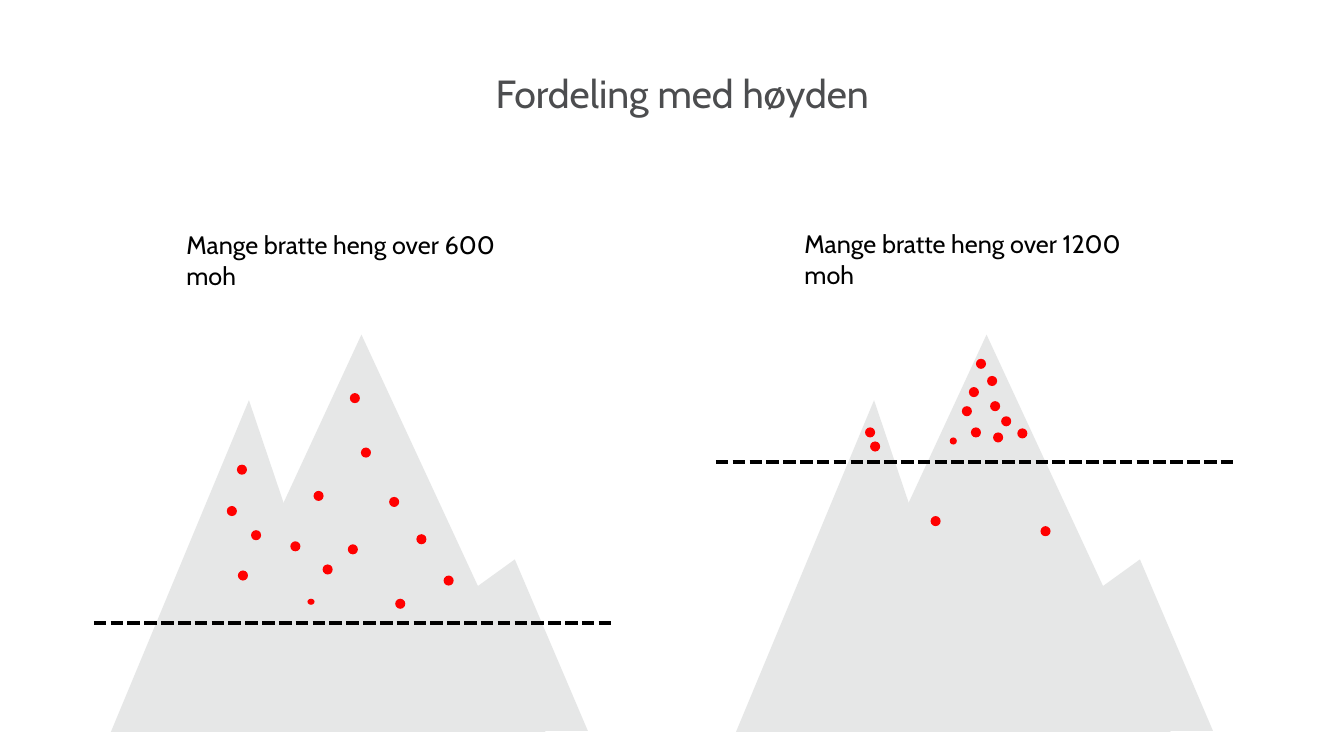
from pptx import Presentation
from pptx.dml.color import RGBColor
from pptx.enum import dml, shapes, text
from pptx.oxml import ns
from pptx.util import Pt
from lxml import etree

EMU_PER_PX = 9144
FONT = "Cabin"
TITLE_GREY = RGBColor(0x4C, 0x4D, 0x4F)
MOUNTAIN_GREY = RGBColor(0xE6, 0xE7, 0xE7)
RED = RGBColor(0xFF, 0x00, 0x00)
BLACK = RGBColor(0x00, 0x00, 0x00)

DOT_SIZE = 10
LINE_LENGTH = 516
PEAKS = [
    (0, 65, 248, 329, 0.552),
    (66, 0, 365, 394, 0.5),
    (165, 223, 308, 170, 0.765),
]
LOW_DOTS = [
    (225, 502), (311, 487), (320, 560), (440, 571), (249, 526),
    (236, 566), (235, 461), (288, 537), (345, 540), (392, 594),
    (358, 444), (347, 390), (413, 530), (386, 493),
]
HIGH_DOTS = [
    (863, 438), (979, 373), (982, 398), (963, 424), (985, 429),
    (961, 384), (1009, 425), (954, 403), (858, 424), (993, 413),
    (968, 356), (1032, 522), (923, 512),
]


def px(length):
    return length * EMU_PER_PX


def add_filled(container, kind, left, top, width, height, color):
    shape = container.add_shape(kind, px(left), px(top), px(width), px(height))
    shape.shadow.inherit = False
    shape.fill.solid()
    shape.fill.fore_color.rgb = color
    shape.line.fill.background()
    return shape


def add_dot(container, left, top, width=DOT_SIZE, height=DOT_SIZE):
    add_filled(container, shapes.MSO_SHAPE.OVAL, left, top, width, height, RED)


def add_mountain(slide, left, top, dots, small_dot):
    group = slide.shapes.add_group_shape()
    for x, y, width, height, apex in PEAKS:
        peak = add_filled(group.shapes, shapes.MSO_SHAPE.ISOSCELES_TRIANGLE,
                          left + x, top + y, width, height, MOUNTAIN_GREY)
        peak.adjustments[0] = apex
    for x, y in dots:
        add_dot(group.shapes, x, y)
    add_dot(group.shapes, *small_dot)


def add_height_line(slide, left, top):
    connector = slide.shapes.add_connector(
        shapes.MSO_CONNECTOR.STRAIGHT,
        px(left), px(top), px(left + LINE_LENGTH), px(top))
    connector.line.color.rgb = BLACK
    connector.line.width = Pt(3)
    connector.line.dash_style = dml.MSO_LINE.SQUARE_DOT
    properties = connector._element.spPr
    etree.SubElement(properties, ns.qn("a:effectLst"))


def format_text(frame, wording, size, color, alignment):
    frame.text = wording
    frame.word_wrap = True
    frame.vertical_anchor = text.MSO_ANCHOR.TOP
    paragraph = frame.paragraphs[0]
    paragraph.alignment = alignment
    paragraph.font.name = FONT
    paragraph.font.size = Pt(size)
    paragraph.font.color.rgb = color


def set_title(slide, wording, left, top, width, height):
    title = slide.shapes.title
    title.left, title.top = px(left), px(top)
    title.width, title.height = px(width), px(height)
    format_text(title.text_frame, wording, 28, TITLE_GREY, text.PP_ALIGN.CENTER)


def add_caption(slide, wording, left, top, width, height):
    box = slide.shapes.add_textbox(px(left), px(top), px(width), px(height))
    format_text(box.text_frame, wording, 18, BLACK, text.PP_ALIGN.LEFT)


def main():
    presentation = Presentation()
    presentation.slide_width = px(1333)
    presentation.slide_height = px(750)
    slide = presentation.slides.add_slide(presentation.slide_layouts[5])

    set_title(slide, "Fordeling med høyden", 113, 64, 1127, 90)
    add_mountain(slide, 110, 332, LOW_DOTS, (305, 594, 7, 6))
    add_mountain(slide, 730, 332, HIGH_DOTS, (942, 434, 7, 7))
    add_height_line(slide, 93, 618)
    add_height_line(slide, 710, 458)
    add_caption(slide, "Mange bratte heng over 600 moh", 175, 223, 365, 40)
    add_caption(slide, "Mange bratte heng over 1200 moh", 788, 222, 378, 40)

    presentation.save("out.pptx")


if __name__ == "__main__":
    main()
